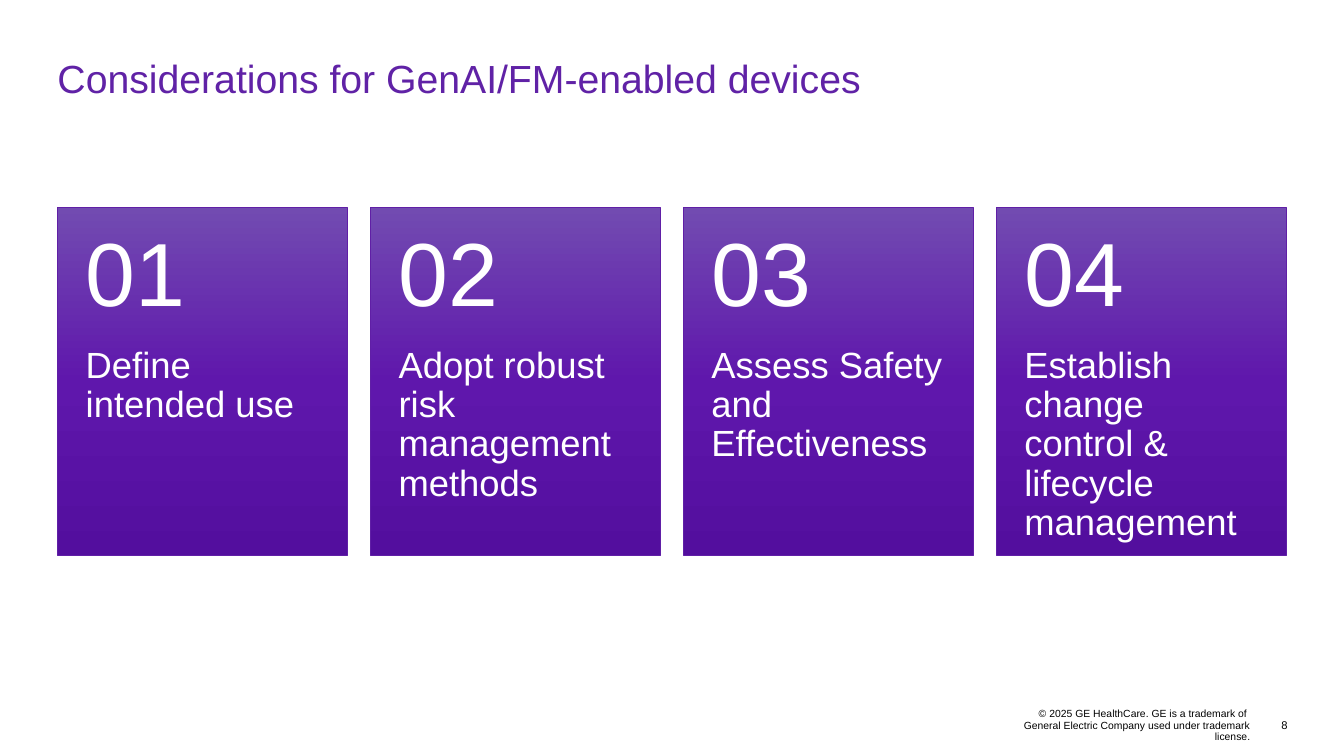
from copy import deepcopy

from pptx import Presentation
from pptx.dml.color import RGBColor
from pptx.enum.shapes import MSO_SHAPE
from pptx.enum.text import MSO_ANCHOR, PP_ALIGN
from pptx.oxml.ns import qn
from pptx.util import Inches, Pt

TITLE = "Considerations for GenAI/FM-enabled devices"
CONSIDERATIONS = [
    "Define intended use",
    "Adopt robust risk management methods",
    "Assess Safety and Effectiveness",
    "Establish change control & lifecycle management",
]
COPYRIGHT = [
    " © 2025 GE HealthCare. GE is a trademark of ",
    "General Electric Company used under trademark license.",
]
PAGE_NUMBER = "8"

FONT = "Arial"
PURPLE = RGBColor(0x60, 0x22, 0xA6)
CARD_LINE = RGBColor(0x60, 0x1F, 0xA6)
WHITE = RGBColor(0xFF, 0xFF, 0xFF)
BLACK = RGBColor(0x00, 0x00, 0x00)
CARD_GRADIENT = [
    (0, RGBColor(0x72, 0x4B, 0xB1)),
    (0.5, RGBColor(0x5F, 0x17, 0xAC)),
    (1, RGBColor(0x53, 0x0E, 0x9E)),
]

SLIDE_WIDTH, SLIDE_HEIGHT = 13.33, 7.5
MARGIN = 0.57
CONTENT_WIDTH = SLIDE_WIDTH - 2 * MARGIN
CARD_TOP, CARD_WIDTH, CARD_HEIGHT = 2.06, 2.88, 3.45
CARD_STEP = (CONTENT_WIDTH - CARD_WIDTH) / (len(CONSIDERATIONS) - 1)
NUMBER_HEIGHT = 0.4 * CARD_HEIGHT
CARD_PADDING = 0.28
FOOTER_TOP, FOOTER_HEIGHT = 7.06, 0.28


def add_text(slide, lines, box, size, color, align=PP_ALIGN.LEFT,
             anchor=MSO_ANCHOR.MIDDLE, insets=(0, 0, 0, 0)):
    shape = slide.shapes.add_textbox(*map(Inches, box))
    frame = shape.text_frame
    frame.word_wrap = True
    frame.vertical_anchor = anchor
    (frame.margin_left, frame.margin_top,
     frame.margin_right, frame.margin_bottom) = map(Inches, insets)
    paragraph = frame.paragraphs[0]
    paragraph.alignment = align
    paragraph.line_spacing = 0.9
    for index, line in enumerate(lines):
        if index:
            paragraph.add_line_break()
        run = paragraph.add_run()
        run.text = line
        run.font.name = FONT
        run.font.size = Pt(size)
        run.font.color.rgb = color


def add_card_background(slide, left):
    card = slide.shapes.add_shape(
        MSO_SHAPE.RECTANGLE,
        *map(Inches, (left, CARD_TOP, CARD_WIDTH, CARD_HEIGHT)))
    card.shadow.inherit = False
    card.line.color.rgb = CARD_LINE
    card.line.width = Pt(0.75)
    card.fill.gradient()
    card.fill.gradient_angle = 270
    stop_list = next(card._element.spPr.iter(qn("a:gsLst")))
    stop_list.append(deepcopy(stop_list[-1]))
    for stop, (position, color) in zip(card.fill.gradient_stops, CARD_GRADIENT):
        stop.position = position
        stop.color.rgb = color


def add_card(slide, index, consideration):
    left = MARGIN + index * CARD_STEP
    add_card_background(slide, left)
    add_text(slide, [consideration],
             (left, CARD_TOP + NUMBER_HEIGHT, CARD_WIDTH, CARD_HEIGHT - NUMBER_HEIGHT),
             size=26, color=WHITE, anchor=MSO_ANCHOR.TOP,
             insets=(CARD_PADDING, 0, CARD_PADDING, 0.36))
    add_text(slide, [f"{index + 1:02d}"],
             (left, CARD_TOP, CARD_WIDTH, NUMBER_HEIGHT),
             size=64, color=WHITE,
             insets=(CARD_PADDING, 0.18, CARD_PADDING, 0.18))


def main():
    """Build the slide of four numbered consideration cards."""
    presentation = Presentation()
    presentation.slide_width = Inches(SLIDE_WIDTH)
    presentation.slide_height = Inches(SLIDE_HEIGHT)
    slide = presentation.slides.add_slide(presentation.slide_layouts[6])
    add_text(slide, COPYRIGHT, (10, FOOTER_TOP, 2.4, FOOTER_HEIGHT),
             size=7.4, color=BLACK, align=PP_ALIGN.RIGHT)
    add_text(slide, [TITLE], (MARGIN, 0.4, CONTENT_WIDTH, 0.8),
             size=28, color=PURPLE)
    add_text(slide, [PAGE_NUMBER], (12.52, FOOTER_TOP, 0.25, FOOTER_HEIGHT),
             size=8, color=BLACK, align=PP_ALIGN.RIGHT)
    for index, consideration in enumerate(CONSIDERATIONS):
        add_card(slide, index, consideration)
    presentation.save("out.pptx")


if __name__ == "__main__":
    main()
